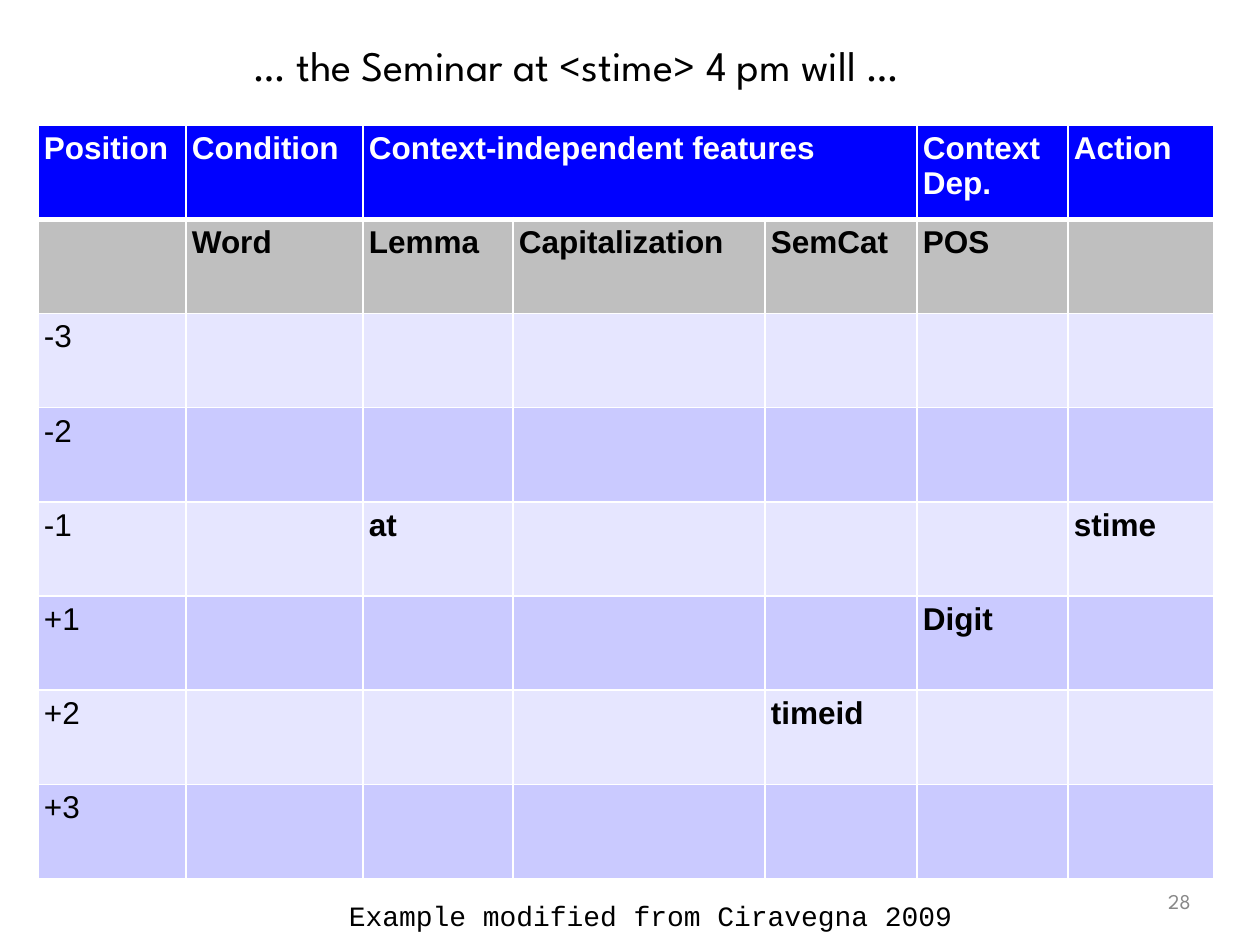
from dataclasses import dataclass

from lxml import etree
from pptx import Presentation
from pptx.dml.color import RGBColor
from pptx.enum.text import MSO_ANCHOR, PP_ALIGN
from pptx.oxml.ns import qn
from pptx.util import Emu, Pt

LEFT, RIGHT = PP_ALIGN.LEFT, PP_ALIGN.RIGHT
TOP, MIDDLE = MSO_ANCHOR.TOP, MSO_ANCHOR.MIDDLE
EMU_PER_PX = 914400 / 126
TITLE_ONLY = 5


@dataclass(frozen=True)
class Theme:
    black: str = "000000"
    white: str = "FFFFFF"
    grey: str = "888888"
    header: str = "0001FF"
    subheader: str = "BFBFBF"
    bands: tuple = ("E6E6FF", "CACAFF")
    display: str = "League Spartan"
    body: str = "Arial"
    mono: str = "Courier New"
    title_size: int = 24
    table_size: int = 18
    credit_size: int = 16
    number_size: int = 12
    rule: int = 1
    header_rule: int = 3
    inset: int = 6


def px(length):
    return Emu(round(length * EMU_PER_PX))


class SlideBuilder:
    def __init__(self, slide, theme):
        self.slide = slide
        self.theme = theme

    def set_text(self, frame, text, font_name, size, color, bold=False, align=LEFT):
        frame.text = text
        paragraph = frame.paragraphs[0]
        paragraph.alignment = align
        font = paragraph.font
        font.name, font.size, font.bold = font_name, Pt(size), bold
        font.color.rgb = RGBColor.from_string(color)

    def set_insets(self, target):
        inset = px(self.theme.inset)
        target.margin_left = target.margin_right = inset
        target.margin_top = target.margin_bottom = inset

    def title(self, text, left, top, width, height):
        heading = self.slide.shapes.title
        heading.left, heading.top = px(left), px(top)
        heading.width, heading.height = px(width), px(height)
        frame = heading.text_frame
        self.set_insets(frame)
        frame.vertical_anchor = TOP
        frame.word_wrap = True
        self.set_text(frame, text, self.theme.display, self.theme.title_size, self.theme.black)

    def label(self, text, box, font_name, size, color, align=LEFT, anchor=TOP, wrap=True):
        frame = self.slide.shapes.add_textbox(*map(px, box)).text_frame
        self.set_insets(frame)
        frame.word_wrap = wrap
        frame.vertical_anchor = anchor
        self.set_text(frame, text, font_name, size, color, align=align)

    def border(self, cell, top, bottom):
        properties = cell._tc.get_or_add_tcPr()
        sides = {"L": self.theme.rule, "R": self.theme.rule, "T": top, "B": bottom}
        for index, (side, points) in enumerate(sides.items()):
            line = etree.Element(qn(f"a:ln{side}"), w=str(Pt(points)))
            fill = etree.SubElement(line, qn("a:solidFill"))
            etree.SubElement(fill, qn("a:srgbClr"), val=self.theme.white)
            properties.insert(index, line)

    def row_fill(self, row):
        leading = (self.theme.header, self.theme.subheader)
        return leading[row] if row < 2 else self.theme.bands[row % 2]

    def table(self, rows, column_widths, left, top, height):
        theme = self.theme
        box = map(px, (left, top, sum(column_widths), height))
        grid = self.slide.shapes.add_table(len(rows), len(column_widths), *box).table
        for column, width in zip(grid.columns, column_widths):
            column.width = px(width)
        for row, texts in enumerate(rows):
            for column, text in enumerate(texts):
                cell = grid.cell(row, column)
                self.set_insets(cell)
                cell.fill.solid()
                cell.fill.fore_color.rgb = RGBColor.from_string(self.row_fill(row))
                self.border(cell, theme.header_rule if row == 1 else theme.rule,
                            theme.header_rule if row == 0 else theme.rule)
                self.set_text(cell.text_frame, text, theme.body, theme.table_size,
                              theme.white if row == 0 else theme.black,
                              bold=row < 2 or column > 0)
        return grid


def main():
    theme = Theme()
    deck = Presentation()
    deck.slide_width, deck.slide_height = px(1260), px(945)
    page = SlideBuilder(deck.slides.add_slide(deck.slide_layouts[TITLE_ONLY]), theme)

    page.label("28", (1159, 882, 38, 39), theme.display, theme.number_size,
               theme.grey, align=RIGHT, anchor=MIDDLE, wrap=False)

    rule_rows = [
        ("Position", "Condition", "Context-independent features", "", "",
         "Context Dep.", "Action"),
        ("", "Word", "Lemma", "Capitalization", "SemCat", "POS", ""),
        ("-3", "", "", "", "", "", ""),
        ("-2", "", "", "", "", "", ""),
        ("-1", "", "at", "", "", "", "stime"),
        ("+1", "", "", "", "", "Digit", ""),
        ("+2", "", "", "", "timeid", "", ""),
        ("+3", "", "", "", "", "", ""),
    ]
    rule_table = page.table(rule_rows, (148, 177, 150, 252, 152, 151, 146), 38, 125, 754)
    rule_table.cell(0, 2).merge(rule_table.cell(0, 4))

    page.title("… the Seminar at <stime> 4 pm will …", 248, 34, 961, 63)
    page.label("Example modified from Ciravegna 2009", (343, 892, 631, 44),
               theme.mono, theme.credit_size, theme.black)

    deck.save("out.pptx")


if __name__ == "__main__":
    main()
